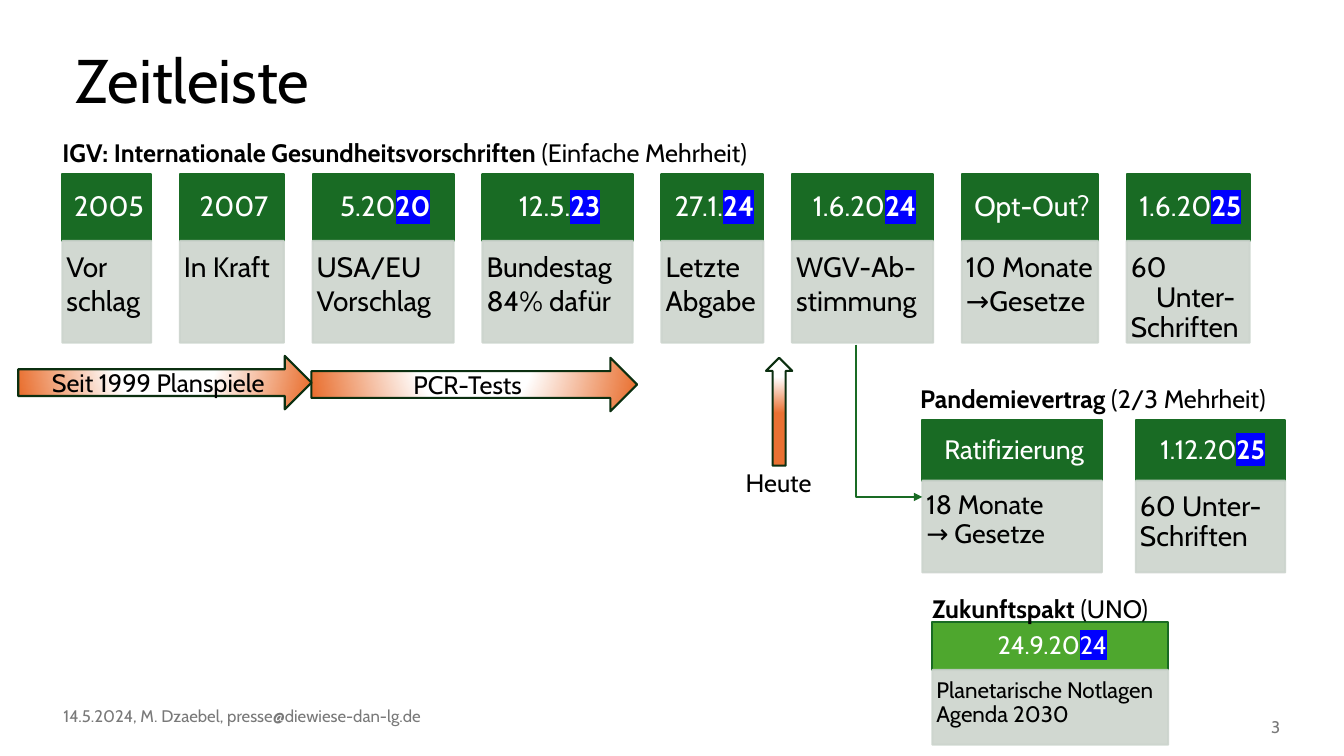
import pptx
import pptx.util
import pptx.dml.color
import pptx.enum.shapes
import pptx.enum.text
import pptx.oxml
import pptx.oxml.ns

Pt = pptx.util.Pt
SHAPE = pptx.enum.shapes.MSO_SHAPE
ALIGN = pptx.enum.text.PP_ALIGN
ANCHOR = pptx.enum.text.MSO_ANCHOR
NS = pptx.oxml.ns.nsdecls("a")

FONT = "Cabin"
GREEN, LIME, GREY = "196B24", "4EA72E", "CCD4CD"
WHITE, BLACK, MUTED = "FFFFFF", "000000", "797979"
ORANGE, EDGE, MARK = "E97132", "0B2F10", "0000FF"


def color(code):
    return pptx.dml.color.RGBColor.from_string(code)


def node(xml):
    """Parse one drawing element; its tag carries no prefix declaration."""
    tag, rest = xml.split(" ", 1)
    return pptx.oxml.parse_xml(f"{tag} {NS} {rest}")


def add_run(para, text, size, ink, bold=False, mark=False):
    run = para.add_run()
    run.text = text
    font = run.font
    font.size, font.bold, font.name = Pt(size), bold, FONT
    font.color.rgb = color(ink)
    if mark:
        light = node(f'<a:highlight ><a:srgbClr val="{MARK}"/></a:highlight>')
        font._element.find(pptx.oxml.ns.qn("a:latin")).addprevious(light)


def add_label(slide, left, top, width, parts, size=18, ink=BLACK,
              align=ALIGN.LEFT, anchor=ANCHOR.TOP, wrap=True):
    """Text box of one line; parts are (text, bold) pairs."""
    box = slide.shapes.add_textbox(Pt(left), Pt(top), Pt(width), Pt(28.8))
    frame = box.text_frame
    frame.word_wrap, frame.vertical_anchor = wrap, anchor
    para = frame.paragraphs[0]
    para.alignment = align
    for text, bold in parts:
        add_run(para, text, size, ink, bold)


def add_box(slide, kind, left, top, width, height, line):
    box = slide.shapes.add_shape(kind, Pt(left), Pt(top), Pt(width), Pt(height))
    box.shadow.inherit = False
    box.line.color.rgb = color(line)
    box.line.width = Pt(1.5)
    return box


def fill_box(box, code):
    box.fill.solid()
    box.fill.fore_color.rgb = color(code)


def fade(box):
    """Make fill and line 90 % opaque."""
    for tint in box._element.spPr.iter(pptx.oxml.ns.qn("a:srgbClr")):
        tint.append(node('<a:alpha val="90000"/>'))


def set_frame(box, anchor, pad):
    frame = box.text_frame
    frame.word_wrap, frame.vertical_anchor = True, anchor
    frame.margin_left, frame.margin_right = Pt(2.9), 0
    frame.margin_top = frame.margin_bottom = Pt(pad)
    return frame


def add_card(slide, left, width, row, card):
    """Date header above a grey note; row holds what a row of cards shares."""
    date, year, lines = card["date"], card["year"], card["lines"]
    size = card.get("size", row["size"])
    top, head, note = row["top"], row["head"], row["note"]

    box = add_box(slide, SHAPE.RECTANGLE, left, top, width, head, GREEN)
    fill_box(box, row["fill"])
    para = set_frame(box, ANCHOR.MIDDLE, 5).paragraphs[0]
    para.alignment, para.line_spacing = ALIGN.CENTER, 0.9
    add_run(para, date, row["size"], WHITE)
    if year:
        add_run(para, year, row["size"], WHITE, row["bold"], True)

    box = add_box(slide, SHAPE.RECTANGLE, left, top + head, width, note, GREY)
    fill_box(box, GREY)
    fade(box)
    frame = set_frame(box, ANCHOR.TOP, row["pad"])
    for i, text in enumerate(lines):
        para = frame.add_paragraph() if i else frame.paragraphs[0]
        para.level, para.alignment, para.line_spacing = 1, ALIGN.LEFT, 0.9
        para.space_after = Pt(card.get("after", 0))
        props = para._p.get_or_add_pPr()
        props.set("marL", str(Pt(18)))
        props.set("indent", str(Pt(-18)))
        add_run(para, text, card.get("note", size), BLACK)


def add_row(slide, left, gap, row, cards):
    for card in cards:
        add_card(slide, left, card["width"], row, card)
        left += card["width"] + gap


def card(width, date, year, *lines, **extra):
    return dict(width=width, date=date, year=year, lines=lines, **extra)


def add_arrow(slide, kind, left, top, width, height, text=""):
    box = add_box(slide, kind, left, top, width, height, EDGE)
    box.fill.gradient()
    stops = "".join(
        f'<a:gs pos="{pos}000"><a:srgbClr val="{code}"/></a:gs>'
        for pos, code in ((0, WHITE), (35, WHITE), (100, ORANGE)))
    grad = box._element.spPr.find(pptx.oxml.ns.qn("a:gradFill"))
    grad.getparent().replace(grad, node(
        f'<a:gradFill rotWithShape="1"><a:gsLst>{stops}</a:gsLst>'
        '<a:path path="circle"><a:fillToRect l="50000" t="-80000" '
        'r="50000" b="180000"/></a:path></a:gradFill>'))
    if text:
        frame = box.text_frame
        frame.vertical_anchor = ANCHOR.MIDDLE
        frame.paragraphs[0].alignment = ALIGN.CENTER
        add_run(frame.paragraphs[0], text, 18, BLACK)


def add_bend(slide, x1, y1, x2, y2):
    """Arrow that runs down, then right: an elbow turned by 270 degrees."""
    midx, midy = (x1 + x2) / 2, (y1 + y2) / 2
    halfw, halfh = (y2 - y1) / 2, (x2 - x1) / 2
    link = slide.shapes.add_connector(
        pptx.enum.shapes.MSO_CONNECTOR.ELBOW,
        Pt(midx + halfw), Pt(midy - halfh), Pt(midx - halfw), Pt(midy + halfh))
    link.line.color.rgb = color(GREEN)
    link.line.width = Pt(1.5)
    props = link._element.spPr
    props.find(pptx.oxml.ns.qn("a:xfrm")).set("rot", "16200000")
    props.find(pptx.oxml.ns.qn("a:prstGeom")).set("prst", "bentConnector2")
    link.line._get_or_add_ln().append(node('<a:tailEnd type="triangle"/>'))
    props.append(node("<a:effectLst />"))


def add_title(slide, text):
    title = slide.shapes.title
    title.left, title.top = Pt(46.8), Pt(28.8)
    title.width, title.height = Pt(847.4), Pt(61.2)
    title.text_frame.vertical_anchor = ANCHOR.MIDDLE
    para = title.text_frame.paragraphs[0]
    para.alignment, para.line_spacing = ALIGN.LEFT, 0.9
    add_run(para, text, 44, BLACK)


def main():
    deck = pptx.Presentation()
    deck.slide_width, deck.slide_height = Pt(960), Pt(540)
    slide = deck.slides.add_slide(deck.slide_layouts[5])
    add_title(slide, "Zeitleiste")
    add_label(slide, 38.2, 496.8, 783.4,
              [("14.5.2024, M. Dzaebel, presse@diewiese-dan-lg.de", False)],
              12, MUTED, anchor=ANCHOR.MIDDLE)
    add_label(slide, 705.6, 504.7, 216, [("3", False)], 12, MUTED,
              ALIGN.RIGHT, ANCHOR.MIDDLE)

    rules = dict(top=124.6, head=47.5, note=72.7, size=20, pad=8.6,
                 fill=GREEN, bold=True)
    add_row(slide, 44.6, 20.55, rules, [
        card(63.4, "2005", "", "Vor", "schlag", after=3),
        card(74.2, "2007", "", "In Kraft", after=3),
        card(100.8, "5.20", "20", "USA/EU", "Vorschlag", after=3),
        card(107.3, "12.5.", "23", "Bundestag", "84% dafür", after=3),
        card(72.7, "27.1.", "24", "Letzte", "Abgabe", after=3),
        card(100.8, "1.6.20", "24", "WGV-Ab-", "stimmung", after=3),
        card(97.2, "Opt-Out?", "", "10 Monate", "→Gesetze", after=3),
        card(87.8, "1.6.20", "25", "60 Unter-", "Schriften"),
    ])
    add_label(slide, 37.4, 94.3, 550, [
        ("IGV: Internationale Gesundheitsvorschriften ", True),
        ("(Einfache Mehrheit)", False)])

    treaty = dict(rules, top=300.2, head=43.2, note=65.5, size=19, pad=8)
    add_row(slide, 658.8, 24.4, treaty, [
        card(128.2, "Ratifizierung", "", "18 Monate", "→ Gesetze"),
        card(106.6, "1.12.20", "25", "60 Unter-", "Schriften", note=20),
    ])
    add_label(slide, 650.2, 270, 268.6,
              [("Pandemievertrag", True), (" (2/3 Mehrheit)", False)])
    add_bend(slide, 611.3, 246.2, 658.8, 355)

    pact = dict(top=444.2, head=34.4, note=53.3, size=18, pad=6.5,
                fill=LIME, bold=False)
    add_row(slide, 666, 0, pact, [
        card(168.5, "24.9.20", "24", "Planetarische Notlagen", "Agenda 2030",
             note=16)])
    add_label(slide, 658.8, 420.5, 268.6,
              [("Zukunftspakt", True), (" (UNO)", False)])

    add_arrow(slide, SHAPE.RIGHT_ARROW, 222.5, 255.6, 232.6, 38.2, "PCR-Tests")
    add_arrow(slide, SHAPE.RIGHT_ARROW, 13, 254.2, 209.5, 38.2,
              "Seit 1999 Planspiele")
    add_arrow(slide, SHAPE.UP_ARROW, 547.2, 255.6, 18.7, 77)
    add_label(slide, 525.6, 330.5, 62.6, [("Heute", False)], wrap=False)
    deck.save("out.pptx")


if __name__ == "__main__":
    main()
